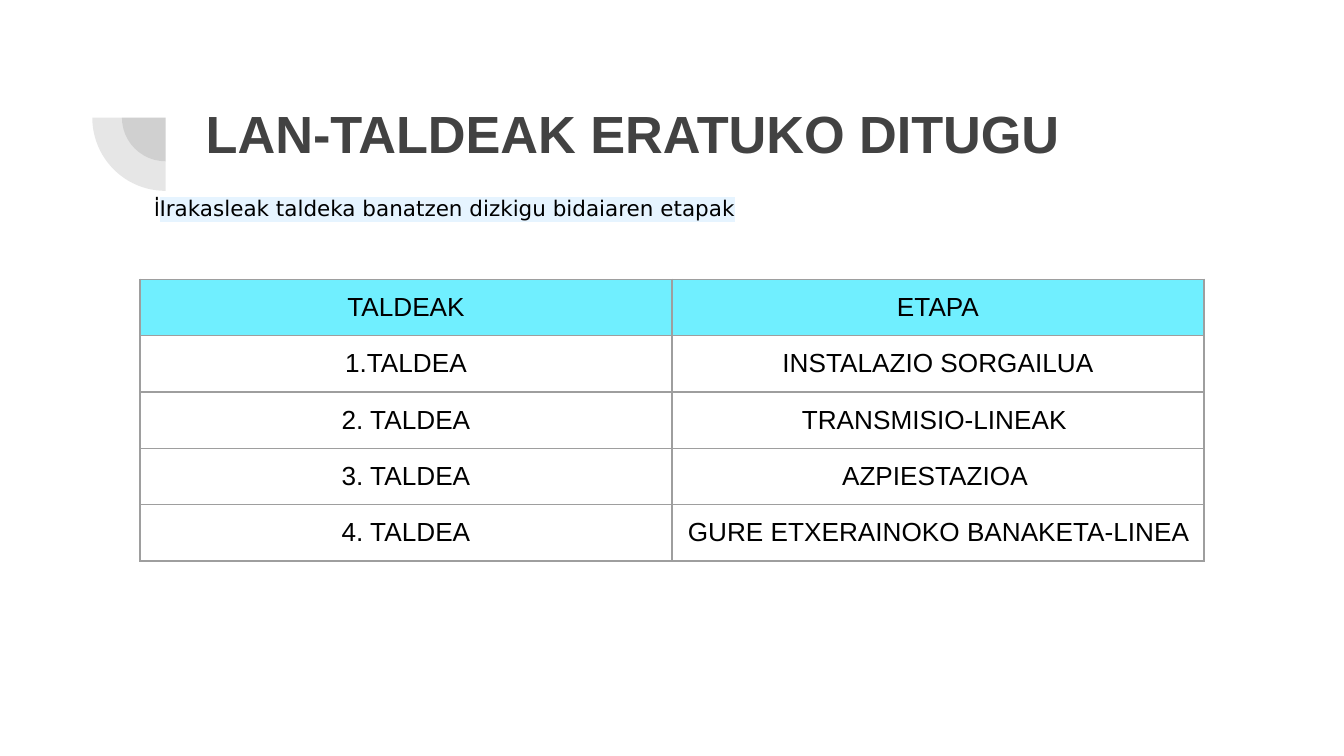
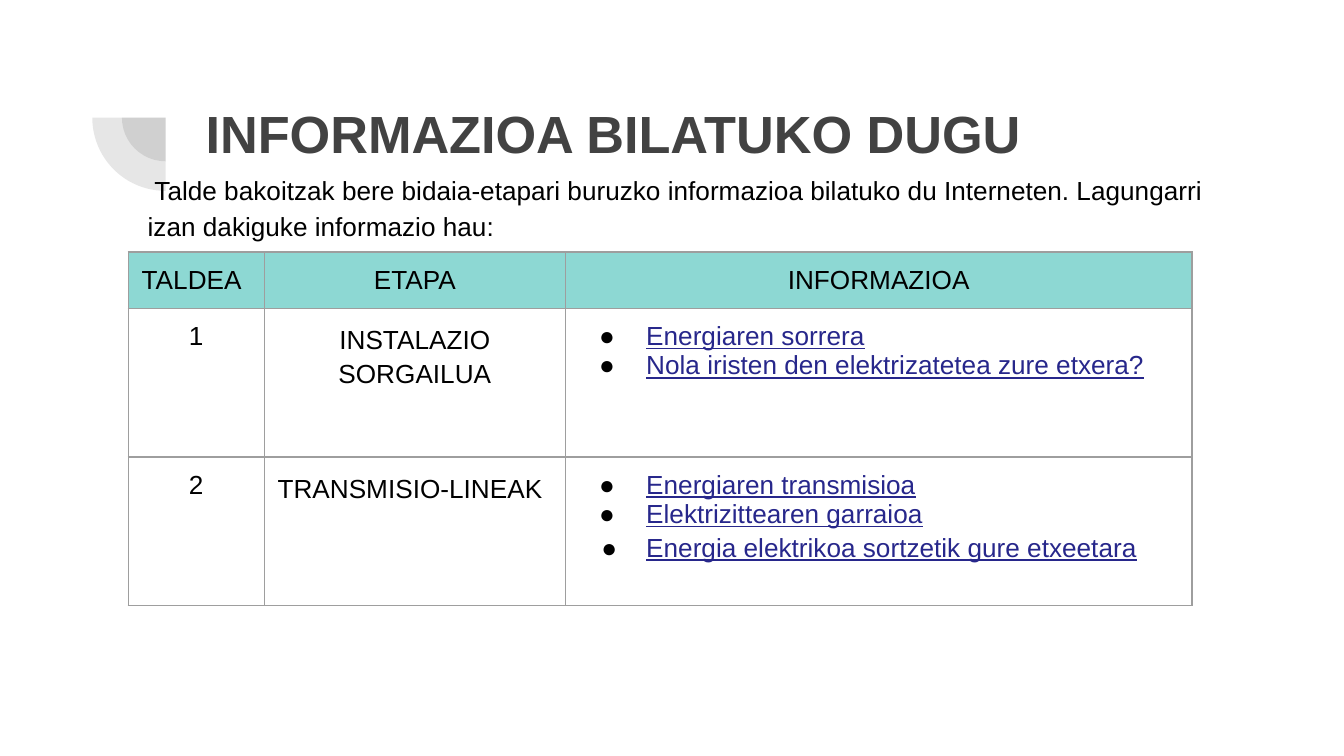
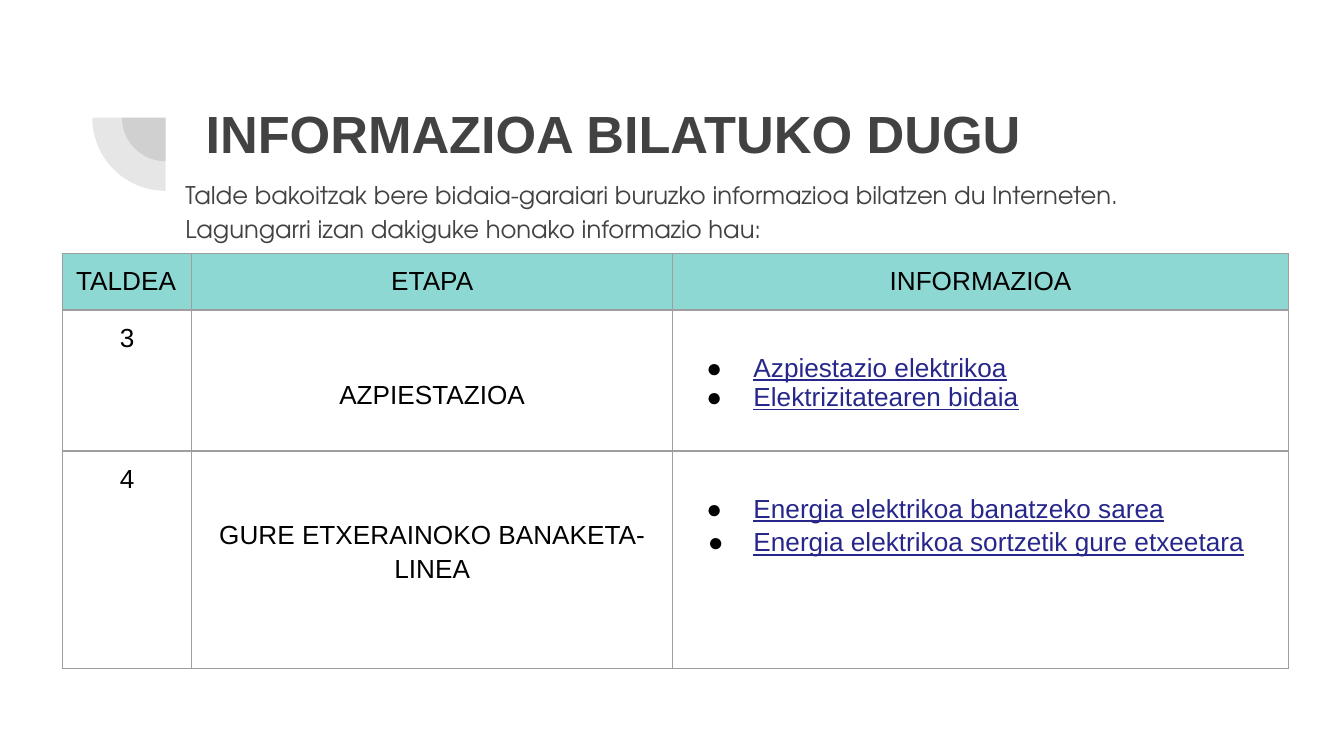
from dataclasses import dataclass

from lxml import etree
from pptx import Presentation
from pptx.dml.color import RGBColor
from pptx.enum.shapes import MSO_SHAPE
from pptx.enum.text import MSO_ANCHOR, MSO_AUTO_SIZE, PP_ALIGN
from pptx.oxml.ns import qn
from pptx.util import Pt

PIE = MSO_SHAPE.PIE
TOP = MSO_ANCHOR.TOP
NO_AUTOFIT = MSO_AUTO_SIZE.NONE
LEFT, CENTER = PP_ALIGN.LEFT, PP_ALIGN.CENTER

BLACK = RGBColor(0x00, 0x00, 0x00)
CHARCOAL = RGBColor(0x42, 0x42, 0x42)
GRID_GRAY = RGBColor(0x9E, 0x9E, 0x9E)
CYAN = RGBColor(0x00, 0xE4, 0xFF)
TEAL = RGBColor(0x8D, 0xD8, 0xD3)
LINK_BLUE = RGBColor(0x27, 0x27, 0x8B)
PALE_BLUE = RGBColor(0xE6, 0xF4, 0xFF)

TITLE_ONLY = 5
INSET = 7.2
HEADER_HEIGHT = 30.2
EMPTY_LINE = 16.1
STAGE_GAP = 12
LOOSE = 1.15


@dataclass
class Style:
    font: str = "Arial"
    size: float = 14
    color: RGBColor = BLACK
    bold: bool = False
    underline: bool = False
    highlight: RGBColor = None


@dataclass
class Cell:
    lines: list
    align: PP_ALIGN = CENTER
    spacing: float = 1
    offset: float = 0


@dataclass
class Link:
    text: str
    hanging: float = 25.2
    spacing: float = 1


BODY = Style()
TITLE = Style(size=28, color=CHARCOAL, bold=True)
LINK = Style(color=LINK_BLUE, underline=True)
ADVENTOR_INITIAL = Style("TeX Gyre Adventor")
ADVENTOR_BODY = Style("TeX Gyre Adventor", 13, CHARCOAL)
HIGHLIGHTED = Style("DejaVu Sans", 11.5, highlight=PALE_BLUE)


# Text
def add_run(paragraph, text, style):
    run = paragraph.add_run()
    run.text = text
    font = run.font
    font.name = style.font
    font.size = Pt(style.size)
    font.bold = style.bold
    font.underline = style.underline
    font.color.rgb = style.color
    if style.highlight is not None:
        highlight = etree.Element(qn("a:highlight"))
        etree.SubElement(highlight, qn("a:srgbClr"), val=str(style.highlight))
        run._r.get_or_add_rPr().find(qn("a:solidFill")).addnext(highlight)


def set_bullet(paragraph, hanging):
    properties = paragraph._p.get_or_add_pPr()
    properties.set("marL", str(Pt(36)))
    properties.set("indent", str(-Pt(hanging)))
    color = etree.SubElement(properties, qn("a:buClr"))
    etree.SubElement(color, qn("a:srgbClr"), val=str(BLACK))
    etree.SubElement(properties, qn("a:buFont"), typeface="Arial")
    etree.SubElement(properties, qn("a:buChar"), char="●")


def format_frame(frame):
    frame.word_wrap = True
    frame.auto_size = NO_AUTOFIT
    frame.vertical_anchor = TOP
    frame.margin_left = frame.margin_right = Pt(INSET)
    frame.margin_top = frame.margin_bottom = Pt(INSET)


def add_text(slide, left, top, width, height, runs, spacing=1):
    shape = slide.shapes.add_textbox(Pt(left), Pt(top), Pt(width), Pt(height))
    format_frame(shape.text_frame)
    paragraph = shape.text_frame.paragraphs[0]
    paragraph.line_spacing = spacing
    for text, style in runs:
        add_run(paragraph, text, style)


# Shared slide frame
def set_alpha(fill, percent):
    color = fill._xPr.find(qn("a:solidFill"))[0]
    etree.SubElement(color, qn("a:alpha"), val=str(percent * 1000))


def add_quarter(slide, center_x, center_y, diameter):
    shape = slide.shapes.add_shape(
        PIE, Pt(center_x - diameter / 2), Pt(center_y - diameter / 2),
        Pt(diameter), Pt(diameter))
    shape.adjustments[0] = 107.93
    shape.adjustments[1] = 162
    shape.rotation = 270
    shape.shadow.inherit = False
    shape.line.fill.background()
    shape.fill.solid()
    shape.fill.fore_color.rgb = CHARCOAL
    set_alpha(shape.fill, 13)


def add_titled_slide(presentation, text):
    slide = presentation.slides.add_slide(presentation.slide_layouts[TITLE_ONLY])
    for diameter in (46.8, 78.5):
        add_quarter(slide, 88.7, 63, diameter)
    title = slide.shapes.title
    title.left, title.top = Pt(103), Pt(46.8)
    title.width, title.height = Pt(553.7), Pt(78.5)
    format_frame(title.text_frame)
    paragraph = title.text_frame.paragraphs[0]
    paragraph.alignment = LEFT
    add_run(paragraph, text, TITLE)
    return slide


# Tables
def set_borders(cell):
    properties = cell._tc.get_or_add_tcPr()
    for index, side in enumerate(("lnL", "lnR", "lnT", "lnB")):
        line = etree.Element(qn(f"a:{side}"), w=str(Pt(0.75)))
        fill = etree.SubElement(line, qn("a:solidFill"))
        etree.SubElement(fill, qn("a:srgbClr"), val=str(GRID_GRAY))
        properties.insert(index, line)


def fill_cell(cell, content):
    cell.margin_left = cell.margin_right = cell.margin_bottom = Pt(INSET)
    cell.margin_top = Pt(INSET + content.offset)
    cell.vertical_anchor = TOP
    frame = cell.text_frame
    for index, line in enumerate(content.lines):
        paragraph = frame.add_paragraph() if index else frame.paragraphs[0]
        paragraph.alignment = content.align
        if isinstance(line, Link):
            paragraph.line_spacing = line.spacing
            set_bullet(paragraph, line.hanging)
            add_run(paragraph, line.text, LINK)
        else:
            paragraph.line_spacing = content.spacing
            add_run(paragraph, line, BODY)


def add_grid(slide, left, top, widths, heights, rows, header_color, header_alpha=100):
    table = slide.shapes.add_table(
        len(rows), len(widths), Pt(left), Pt(top),
        Pt(sum(widths)), Pt(sum(heights))).table
    table.first_row = table.horz_banding = False
    for column, width in zip(table.columns, widths):
        column.width = Pt(width)
    for row_index, (row, height, contents) in enumerate(zip(table.rows, heights, rows)):
        row.height = Pt(height)
        for cell, content in zip(row.cells, contents):
            fill_cell(cell, content)
            if row_index == 0:
                cell.fill.solid()
                cell.fill.fore_color.rgb = header_color
                if header_alpha < 100:
                    set_alpha(cell.fill, header_alpha)
            else:
                cell.fill.background()
            set_borders(cell)


def add_research_table(slide, left, top, widths, heights, groups):
    header = [Cell(["TALDEA"], LEFT), Cell(["ETAPA"]), Cell(["INFORMAZIOA"])]
    rows = [header] + [[Cell([number]), stage, links] for number, stage, links in groups]
    add_grid(slide, left, top, widths, [HEADER_HEIGHT] + heights, rows, TEAL)


# Slides
def add_groups_slide(presentation):
    slide = add_titled_slide(presentation, "LAN-TALDEAK ERATUKO DITUGU")
    rows = [
        ("TALDEAK", "ETAPA"),
        ("1.TALDEA", "INSTALAZIO SORGAILUA"),
        ("2. TALDEA", "TRANSMISIO-LINEAK "),
        ("3. TALDEA", "AZPIESTAZIOA "),
        ("4. TALDEA", "GURE ETXERAINOKO BANAKETA-LINEA "),
    ]
    cells = [[Cell([text]) for text in row] for row in rows]
    add_grid(slide, 75, 149.6, [285, 285], [HEADER_HEIGHT] * len(rows), cells, CYAN, 56)
    add_text(slide, 75.6, 95, 542, 39.6, [
        ("i", ADVENTOR_INITIAL),
        ("Irakasleak taldeka banatzen dizkigu bidaiaren etapak", HIGHLIGHTED),
    ])


def add_generation_slide(presentation):
    slide = add_titled_slide(presentation, "INFORMAZIOA BILATUKO DUGU")
    add_text(slide, 72, 83.5, 584.6, 273.6, [
        (" Talde bakoitzak bere bidaia-etapari buruzko informazioa bilatuko du "
         "Interneten. Lagungarri izan dakiguke informazio hau:", BODY),
    ], LOOSE)
    add_research_table(slide, 68.7, 135, [72.8, 161.5, 335.6], [79.6, 79.6], [
        ("1", Cell(["INSTALAZIO SORGAILUA"], spacing=LOOSE),
         Cell([Link("Energiaren sorrera"),
               Link("Nola iristen den elektrizatetea zure etxera?")], LEFT)),
        ("2", Cell(["TRANSMISIO-LINEAK"], LEFT, LOOSE),
         Cell([Link("Energiaren transmisioa"),
               Link("Elektrizittearen garraioa"),
               Link("Energia elektrikoa sortzetik gure etxeetara", 24, LOOSE)], LEFT)),
    ])


def add_distribution_slide(presentation):
    slide = add_titled_slide(presentation, "INFORMAZIOA BILATUKO DUGU")
    add_text(slide, 92.2, 87.1, 568, 43.2, [
        ("Talde bakoitzak bere bidaia-garaiari buruzko informazioa bilatzen du "
         "Interneten. Lagungarri izan dakiguke honako informazio hau:", ADVENTOR_BODY),
    ], LOOSE)
    stage_offset = EMPTY_LINE + STAGE_GAP
    add_research_table(slide, 33.6, 135.9, [69.1, 257.8, 329.8], [75.5, 116.5], [
        ("3", Cell(["AZPIESTAZIOA"], spacing=LOOSE, offset=stage_offset),
         Cell([Link("Azpiestazio elektrikoa"),
               Link("Elektrizitatearen bidaia")], LEFT, offset=EMPTY_LINE)),
        ("4", Cell(["GURE ETXERAINOKO BANAKETA-LINEA"], spacing=LOOSE, offset=stage_offset),
         Cell([Link("Energia elektrikoa banatzeko sarea"),
               Link("Energia elektrikoa sortzetik gure etxeetara", 24.5, LOOSE)],
              LEFT, offset=EMPTY_LINE)),
    ])


def main():
    presentation = Presentation()
    presentation.slide_width, presentation.slide_height = Pt(720), Pt(405)
    add_groups_slide(presentation)
    add_generation_slide(presentation)
    add_distribution_slide(presentation)
    presentation.save("out.pptx")


if __name__ == "__main__":
    main()
